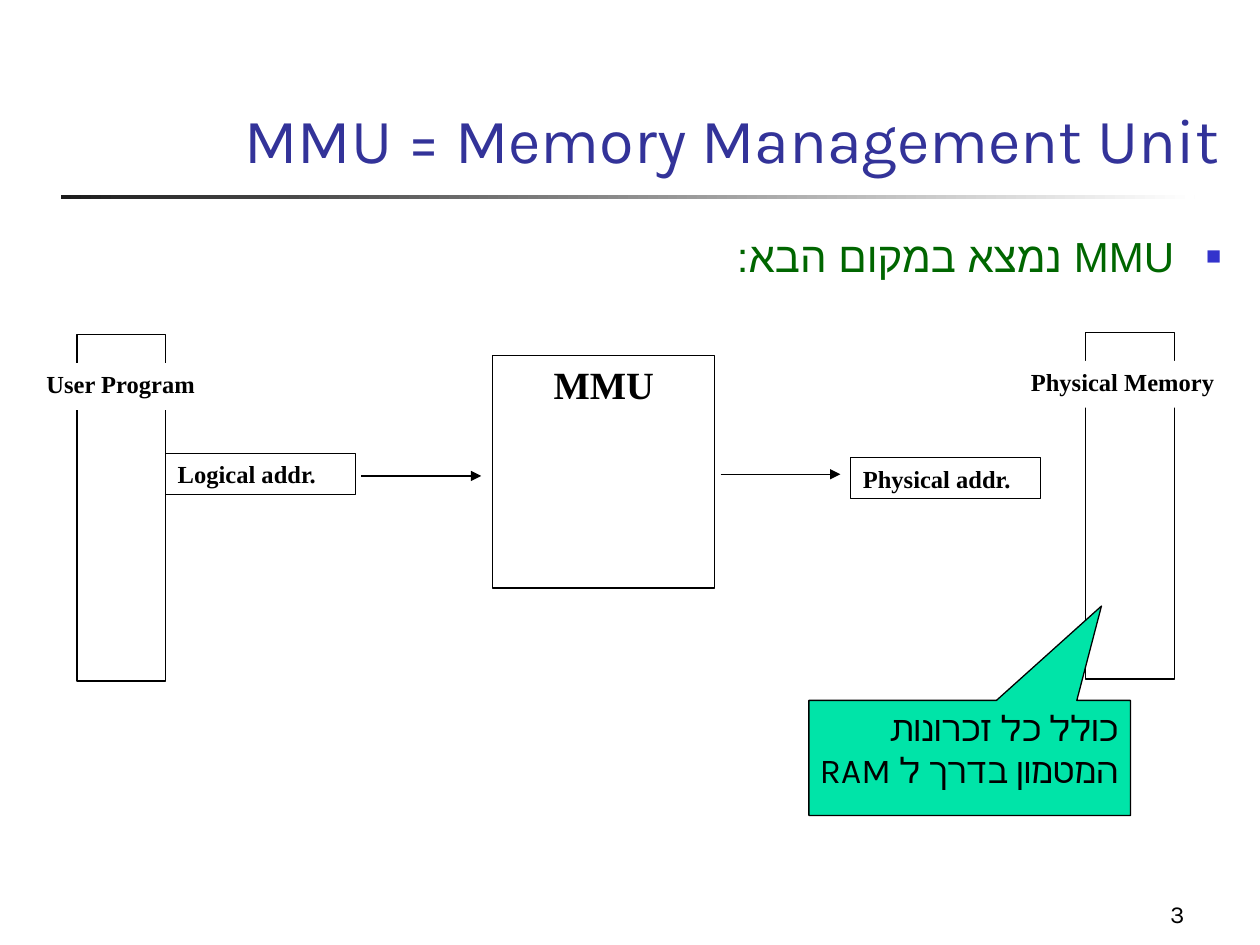
from dataclasses import dataclass

from lxml.etree import SubElement
from pptx import Presentation
from pptx.dml.color import RGBColor
from pptx.enum.shapes import MSO_CONNECTOR, MSO_SHAPE
from pptx.enum.text import MSO_ANCHOR, PP_ALIGN
from pptx.oxml.ns import qn
from pptx.util import Pt


@dataclass(frozen=True)
class Theme:
    """Colours, fonts and type sizes of the slide."""
    ink: str = "000000"
    paper: str = "FFFFFF"
    rule: str = "1C1C1C"
    title: str = "333399"
    body: str = "006600"
    mark: str = "3333CC"
    note: str = "00E4A8"
    sans: str = "Karla"
    serif: str = "Times New Roman"
    hebrew: str = "Arial"
    head: int = 36
    lead: int = 24
    unit: int = 22
    call: int = 20
    label: int = 14
    line: float = 0.75


LOOK = Theme()


def tint(code):
    """Return a colour from its hex code."""
    return RGBColor.from_string(code)


def write(shape, lines, size, face, color=LOOK.ink, bold=False,
          align=PP_ALIGN.LEFT, rtl=False, anchor=MSO_ANCHOR.TOP, wrap=True):
    """Fill a shape with styled lines of text."""
    frame = shape.text_frame
    frame.text = "\n".join(lines)
    frame.word_wrap = wrap
    frame.vertical_anchor = anchor
    for para in frame.paragraphs:
        para.alignment = align
        font = para.font
        font.size, font.name, font.bold = Pt(size), face, bold
        font.color.rgb = tint(color)
        props = para._p.get_or_add_pPr()
        SubElement(props.find(qn("a:defRPr")), qn("a:cs"), typeface=face)
        if rtl:
            props.set("rtl", "1")
        for run in para.runs:
            run.font.size, run.font.name, run.font.bold = Pt(size), face, bold
            run.font.color.rgb = tint(color)
            SubElement(run._r.get_or_add_rPr(), qn("a:cs"), typeface=face)


def panel(slide, box, fill=LOOK.paper, edge=True, kind=MSO_SHAPE.RECTANGLE):
    """Draw a flat filled shape, with a thin edge if asked."""
    shape = slide.shapes.add_shape(kind, *map(Pt, box))
    shape.shadow.inherit = False
    shape.fill.solid()
    shape.fill.fore_color.rgb = tint(fill)
    if edge:
        shape.line.color.rgb = tint(LOOK.ink)
        shape.line.width = Pt(LOOK.line)
    else:
        shape.line.fill.background()
    return shape


def arrow(slide, left, top, width):
    """Draw a level arrow that points right."""
    line = slide.shapes.add_connector(
        MSO_CONNECTOR.STRAIGHT, Pt(left), Pt(top), Pt(left + width), Pt(top))
    line.line.color.rgb = tint(LOOK.ink)
    line.line.width = Pt(LOOK.line)
    SubElement(line.line._get_or_add_ln(), qn("a:tailEnd"), type="triangle")
    SubElement(line._element.spPr, qn("a:effectLst"))


def header(slide, box):
    """Place the title and the fading rule below it."""
    left, top, width, height = box
    title = slide.shapes.title
    title.left, title.top, title.width, title.height = map(Pt, box)
    write(title, ["MMU = Memory Management Unit"], LOOK.head, LOOK.sans,
          LOOK.title, align=PP_ALIGN.RIGHT, rtl=True, anchor=MSO_ANCHOR.BOTTOM)
    rule = panel(slide, (left - 2, top + height + 7, 648, 2.2), edge=False)
    rule.fill.gradient()
    rule.fill.gradient_angle = 0
    for stop, color in zip(rule.fill.gradient_stops, (LOOK.rule, LOOK.paper)):
        stop.color.rgb = tint(color)


def bullet(slide, box):
    """Place the right-to-left bullet line."""
    text = slide.shapes.add_textbox(*map(Pt, box))
    write(text, ["MMU נמצא במקום הבא:"], LOOK.lead, LOOK.hebrew, LOOK.body,
          align=PP_ALIGN.RIGHT, rtl=True)
    para = text.text_frame.paragraphs[0]
    para.space_before = Pt(LOOK.lead * 0.2)
    props = para._p.get_or_add_pPr()
    props.set("marL", str(Pt(27)))
    props.set("indent", str(-Pt(27)))
    marks = [SubElement(props, qn("a:buClr")),
             SubElement(props, qn("a:buSzPct"), val="60000"),
             SubElement(props, qn("a:buFont"), typeface=LOOK.hebrew),
             SubElement(props, qn("a:buChar"), char="■")]
    SubElement(marks[0], qn("a:srgbClr"), val=LOOK.mark)
    for mark in marks:
        props.find(qn("a:defRPr")).addprevious(mark)


def diagram(slide, box):
    """Draw the way from the program through the MMU to memory."""
    left, top, width, height = box
    tags = ((75, 69, "Logical addr."), (466.5, 71.5, "Physical addr."))
    for x, y, name in tags:
        tag = panel(slide, (left + x, top + y, 108.75, 23.5))
        write(tag, [name], LOOK.label, LOOK.serif, bold=True)
    for x, y in ((187, 82), (392.25, 81)):
        arrow(slide, left + x, top + y, 68.5)
    unit = panel(slide, (left + 262, top + 13, 127, 133))
    write(unit, ["MMU"], LOOK.unit, LOOK.serif, bold=True,
          align=PP_ALIGN.CENTER)
    ends = ((24.5, 1.25, 0, "User Program"),
            (601, 0, width - 128, "Physical Memory"))
    for x, y, side, name in ends:
        panel(slide, (left + x, top + y, 50.5, height - 1.25))
        label = panel(slide, (left + side, top + y + 16.25, 128, 26.75),
                      edge=False)
        write(label, [name], LOOK.label, LOOK.serif, bold=True)


def callout(slide, box):
    """Place the note that points at the memory."""
    note = panel(slide, box, LOOK.note, kind=MSO_SHAPE.RECTANGULAR_CALLOUT)
    note.adjustments[0], note.adjustments[1] = 0.41, -1.32
    write(note, ["כולל כל זכרונות", "המטמון בדרך ל RAM"], LOOK.call,
          LOOK.sans, align=PP_ALIGN.RIGHT, rtl=True, wrap=False)


def number(slide, box):
    """Place the page number."""
    text = slide.shapes.add_textbox(*map(Pt, box))
    write(text, ["3"], LOOK.label, LOOK.sans, align=PP_ALIGN.RIGHT,
          anchor=MSO_ANCHOR.BOTTOM)


def main():
    """Build and save the slide."""
    deck = Presentation()
    deck.slide_width, deck.slide_height = Pt(720), Pt(540)
    slide = deck.slides.add_slide(deck.slide_layouts[5])
    header(slide, (36.75, 49, 667.5, 55.5))
    bullet(slide, (36, 128, 669, 355))
    diagram(slide, (19.5, 190, 690.5, 199.25))
    callout(slide, (462.25, 400.25, 183.75, 65.75))
    number(slide, (534, 498, 150, 36))
    deck.save("out.pptx")


if __name__ == "__main__":
    main()
